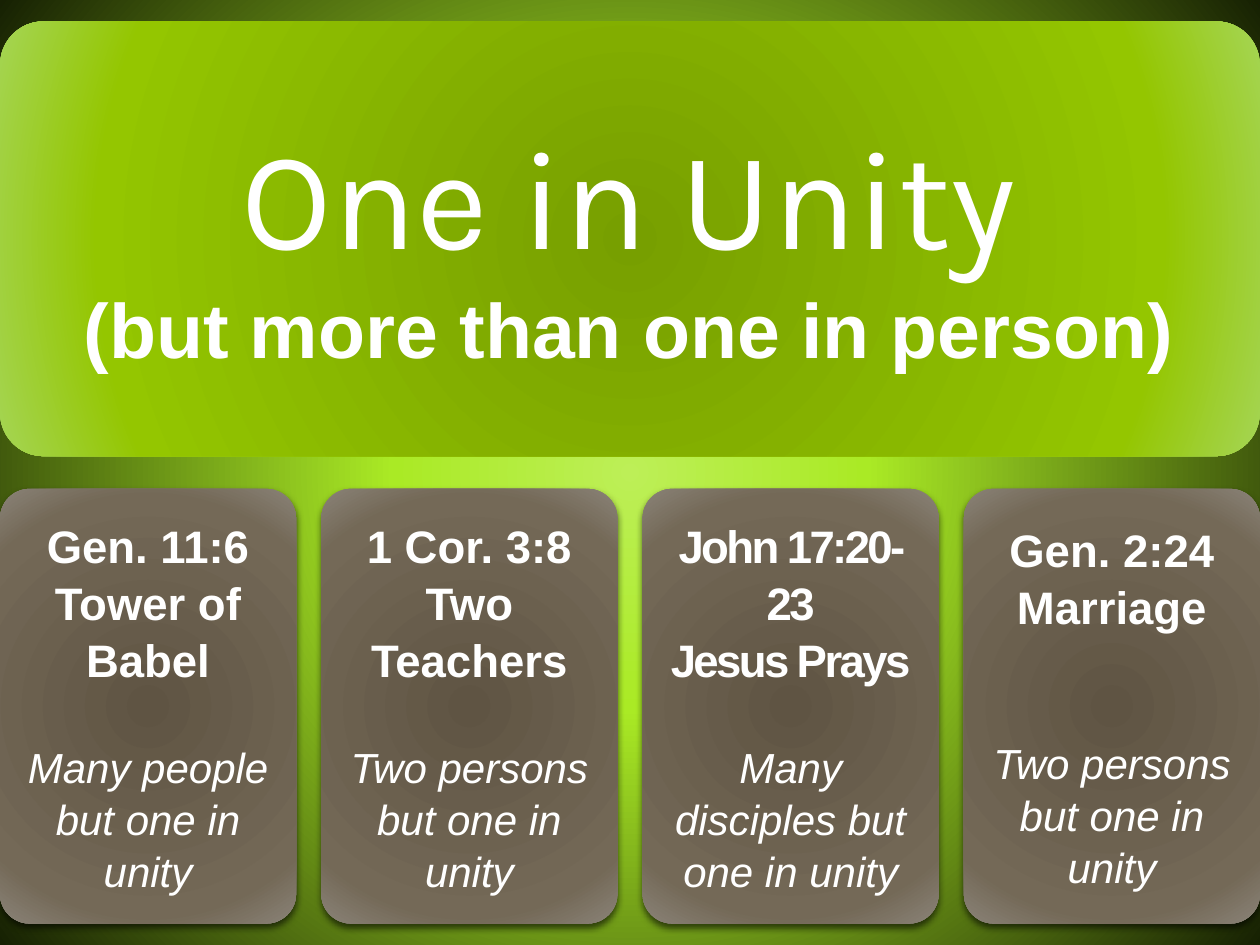
from pptx import Presentation
from pptx.dml.color import RGBColor
from pptx.enum.shapes import MSO_SHAPE
from pptx.enum.text import MSO_ANCHOR, MSO_AUTO_SIZE, PP_ALIGN
from pptx.oxml import parse_xml
from pptx.oxml.ns import nsdecls, qn
from pptx.util import Inches, Pt

ROUNDED = MSO_SHAPE.ROUNDED_RECTANGLE
MIDDLE = MSO_ANCHOR.MIDDLE
NO_FIT = MSO_AUTO_SIZE.NONE
CENTER = PP_ALIGN.CENTER

COLORS = {
    "text": "FFFFFF", "shadow": "000000",
    "glow": "BDEF57", "lime": "AAEA25", "night": "172103",
    "green_dark": "779F00", "green": "94C600", "green_light": "A5D555",
    "brown_dark": "5F5443", "brown": "746957", "brown_light": "8A8378",
}
GRADIENTS = {
    "background": [(0, "glow"), (30, "lime"), (100, "night")],
    "banner": [(0, "green_dark"), (80, "green"), (100, "green_light")],
    "card": [(0, "brown_dark"), (80, "brown"), (100, "brown_light")],
}
STYLES = {
    "title": {"size": Pt(80), "name": "Karla", "bold": False},
    "subtitle": {"size": Pt(44), "name": "Arial", "bold": True},
    "heading": {"size": Pt(26), "name": "Arial", "bold": True},
    "body": {"size": Pt(24), "name": "Arial", "bold": False, "italic": True},
}
TITLE = [("One in Unity", "title", 0), ("(but more than one in person)", "subtitle", 0)]
CARDS = [
    (["Gen. 11:6 Tower of Babel"], "Many people but one in unity", 30, 0),
    (["1 Cor. 3:8 Two Teachers"], "Two persons but one in unity", 30, 0),
    (["John 17:20-23", "Jesus Prays"], "Many disciples but one in unity", 30, -1.5),
    (["Gen. 2:24 Marriage"], "Two persons but one in unity", 58, 0),
]
SLIDE_W, SLIDE_H = 10, 7.5
BANNER_TOP, CARD_TOP, BLOCK_H = 0.17, 3.88, 3.45
CARD_W = 2.35
CARD_STEP = (SLIDE_W - CARD_W) / (len(CARDS) - 1)


def set_gradient(fill, parent, name):
    fill.solid()
    stops = "".join(
        f'<a:gs pos="{pos * 1000}"><a:srgbClr val="{COLORS[color]}"/></a:gs>'
        for pos, color in GRADIENTS[name])
    grad = parse_xml(
        f'<a:gradFill {nsdecls("a")} rotWithShape="1"><a:gsLst>{stops}</a:gsLst>'
        '<a:path path="circle"><a:fillToRect l="50000" t="50000" r="50000" b="50000"/>'
        '</a:path></a:gradFill>')
    parent.replace(parent.find(qn("a:solidFill")), grad)


def add_block(s, left, top, width, gradient):
    sp = s.shapes.add_shape(ROUNDED, Inches(left), Inches(top), Inches(width), Inches(BLOCK_H))
    sp.adjustments[0] = 0.1
    sp.line.fill.background()
    sp.shadow.inherit = False
    set_gradient(sp.fill, sp._element.spPr, gradient)
    return sp


def add_shadow(sp):
    sp._element.spPr.find(qn("a:effectLst")).append(parse_xml(
        f'<a:outerShdw {nsdecls("a")} blurRad="{Pt(4)}" dist="{Pt(2)}" dir="5400000" '
        f'rotWithShape="0"><a:srgbClr val="{COLORS["shadow"]}"><a:alpha val="60000"/>'
        '</a:srgbClr></a:outerShdw>'))


def write(sp, paragraphs, inset, spacing=0):
    tf = sp.text_frame
    tf.word_wrap = True
    tf.auto_size = NO_FIT
    tf.vertical_anchor = MIDDLE
    for side in ("left", "top", "right", "bottom"):
        setattr(tf, f"margin_{side}", Inches(inset))
    for i, (text, style, before) in enumerate(paragraphs):
        p = tf.paragraphs[0] if i == 0 else tf.add_paragraph()
        p.alignment = CENTER
        p.line_spacing = 1.04
        p.space_before = Pt(before)
        r = p.add_run()
        r.text = text
        for key, value in STYLES[style].items():
            setattr(r.font, key, value)
        r.font.color.rgb = RGBColor.from_string(COLORS["text"])
        if spacing and style == "heading":
            r.font._element.set("spc", str(int(spacing * 100)))


def main():
    prs = Presentation()
    prs.slide_width, prs.slide_height = Inches(SLIDE_W), Inches(SLIDE_H)
    s = prs.slides.add_slide(prs.slide_layouts[5])
    fill = s.background.fill
    fill.solid()
    set_gradient(fill, s._element.find(".//" + qn("p:bgPr")), "background")

    add_block(s, 0, BANNER_TOP, SLIDE_W, "banner")
    title = s.shapes.title
    title.left, title.top = Inches(0.1), Inches(0.27)
    title.width, title.height = Inches(9.79), Inches(3.24)
    s.shapes._spTree.append(title._element)
    write(title, TITLE, 0.33)

    for i, (headings, body, gap, spacing) in enumerate(CARDS):
        left = i * CARD_STEP
        add_shadow(add_block(s, left, CARD_TOP, CARD_W, "card"))
        box = s.shapes.add_textbox(Inches(left + 0.07), Inches(CARD_TOP + 0.07),
                                   Inches(2.21), Inches(3.31))
        lines = [(text, "heading", 0) for text in headings] + [(body, "body", gap)]
        write(box, lines, 0.11, spacing)

    prs.save("out.pptx")


if __name__ == "__main__":
    main()
